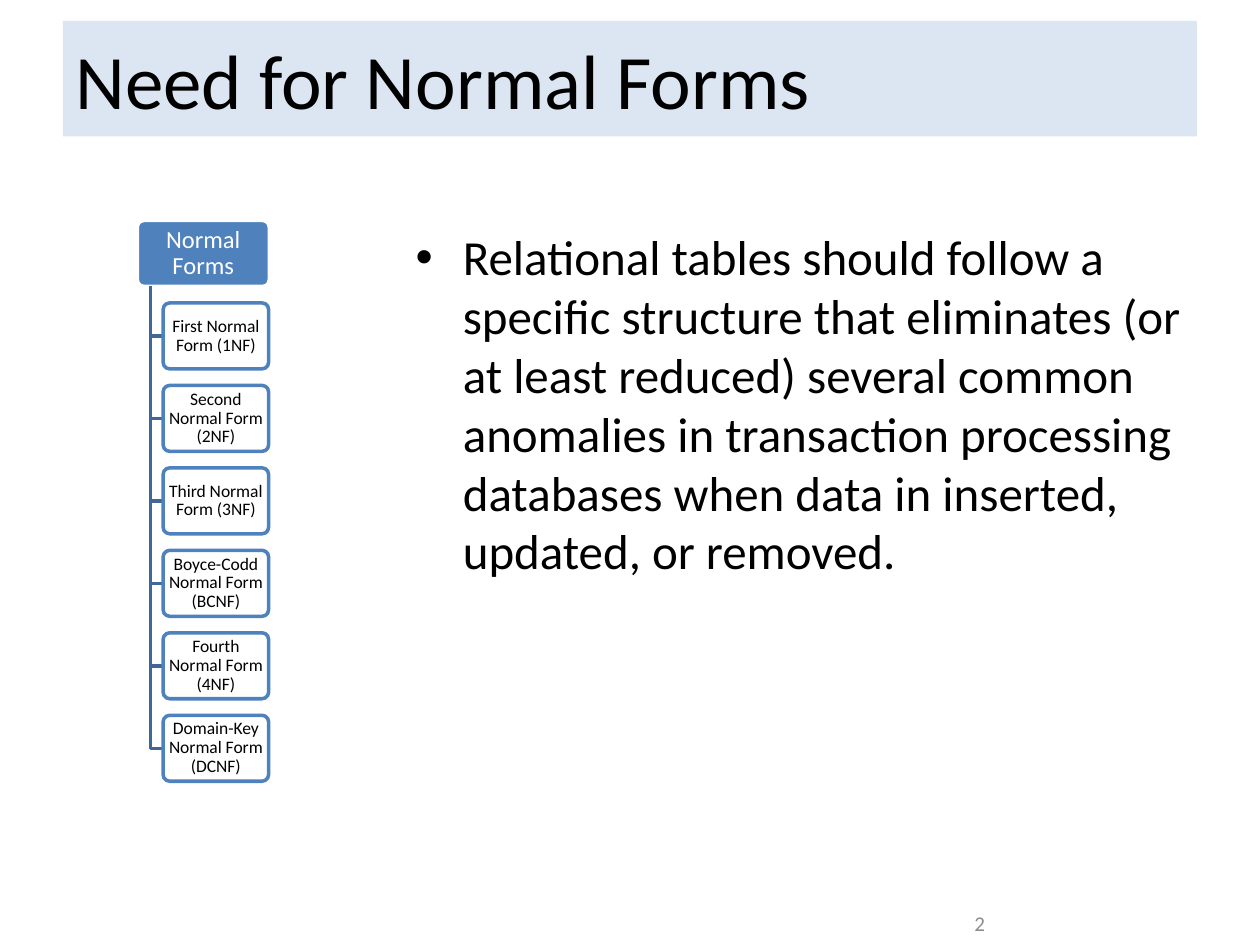
from lxml import etree
from pptx import Presentation
from pptx.dml.color import RGBColor
from pptx.enum.shapes import MSO_SHAPE
from pptx.enum.text import MSO_ANCHOR, PP_ALIGN
from pptx.oxml.ns import qn
from pptx.util import Pt

RECT, ROUND = MSO_SHAPE.RECTANGLE, MSO_SHAPE.ROUNDED_RECTANGLE
TOP, MIDDLE = MSO_ANCHOR.TOP, MSO_ANCHOR.MIDDLE
LEFT, CENTER, RIGHT = PP_ALIGN.LEFT, PP_ALIGN.CENTER, PP_ALIGN.RIGHT

BLACK = RGBColor(0x00, 0x00, 0x00)
WHITE = RGBColor(0xFF, 0xFF, 0xFF)
GRAY = RGBColor(0x8C, 0x8C, 0x8C)
PALE_BLUE = RGBColor(0xDC, 0xE6, 0xF2)
BLUE = RGBColor(0x4F, 0x81, 0xBD)
DARK_BLUE = RGBColor(0x3F, 0x67, 0x97)

FORMS = [
    "First Normal Form (1NF)",
    "Second Normal Form (2NF)",
    "Third Normal Form (3NF)",
    "Boyce-Codd Normal Form (BCNF)",
    "Fourth Normal Form (4NF)",
    "Domain-Key Normal Form (DCNF)",
]


def write(sp, text, *, size, font="Calibri", color=BLACK, align=LEFT,
          anchor=TOP, inset=(7.2, 3.6), spacing=None, bullet_indent=None):
    """Fill a shape with one formatted paragraph."""
    tf = sp.text_frame
    tf.word_wrap = True
    tf.vertical_anchor = anchor
    tf.margin_left = tf.margin_right = Pt(inset[0])
    tf.margin_top = tf.margin_bottom = Pt(inset[1])
    p = tf.paragraphs[0]
    p.alignment = align
    if spacing:
        p.line_spacing = spacing
    if bullet_indent:
        pPr = p._p.get_or_add_pPr()
        pPr.set("marL", str(Pt(bullet_indent)))
        pPr.set("indent", str(-Pt(bullet_indent)))
        etree.SubElement(pPr, qn("a:buFont")).set("typeface", "Arial")
        etree.SubElement(pPr, qn("a:buChar")).set("char", "•")
    r = p.add_run()
    r.text = text
    r.font.name = font
    r.font.size = Pt(size)
    r.font.color.rgb = color


class SlideBuilder:
    """Holds the current slide and its shared line style."""

    line_width = 2
    corner = 0.1

    def __init__(self, slide):
        self.shapes = slide.shapes

    def text(self, box, text, **fmt):
        sp = self.shapes.add_textbox(*map(Pt, box))
        write(sp, text, **fmt)

    def panel(self, box, text, *, fill, shape=RECT, line=None, alpha=None, **fmt):
        sp = self.shapes.add_shape(shape, *map(Pt, box))
        sp.shadow.inherit = False
        if shape == ROUND:
            sp.adjustments[0] = self.corner
        sp.fill.solid()
        sp.fill.fore_color.rgb = fill
        if alpha:
            clr = sp._element.spPr.find(qn("a:solidFill"))[0]
            etree.SubElement(clr, qn("a:alpha")).set("val", str(alpha * 1000))
        if line:
            sp.line.color.rgb = line
            sp.line.width = Pt(self.line_width)
        else:
            sp.line.fill.background()
        write(sp, text, **fmt)

    def elbow(self, x1, y1, x2, y2, color):
        """Line that runs down from the first point, then across."""
        fb = self.shapes.build_freeform(Pt(x1), Pt(y1))
        fb.add_line_segments([(Pt(x1), Pt(y2)), (Pt(x2), Pt(y2))], close=False)
        sp = fb.convert_to_shape()
        sp.shadow.inherit = False
        sp.fill.background()
        sp.line.color.rgb = color
        sp.line.width = Pt(self.line_width)


def main():
    prs = Presentation()
    prs.slide_width, prs.slide_height = Pt(720), Pt(540)
    s = SlideBuilder(prs.slides.add_slide(prs.slide_layouts[6]))

    # Title band
    s.panel((36, 12, 648, 66), "Need for Normal Forms", fill=PALE_BLUE,
            size=44, anchor=MIDDLE)

    # Body text
    s.text((230.4, 126, 453.6, 356.4),
           "Relational tables should follow a specific structure that eliminates "
           "(or at least reduced) several common anomalies in transaction "
           "processing databases when data in inserted, updated, or removed.",
           size=28, bullet_indent=27)

    # Hierarchy: root box, then one branch per normal form
    root_x, root_y, root_w, box_h = 78.5, 126, 75.4, 37.7
    trunk_x, child_x, child_w = 86, 93.2, 60.3
    gap = box_h / 4
    root_bottom = root_y + box_h
    s.panel((root_x, root_y, root_w, box_h), "Normal Forms", fill=BLUE,
            shape=ROUND, line=WHITE, size=14, color=WHITE, align=CENTER,
            anchor=MIDDLE, inset=(2, 1.4), spacing=0.9)
    for i, name in enumerate(FORMS):
        y = root_bottom + gap + i * (box_h + gap)
        s.elbow(trunk_x, root_bottom, child_x, y + box_h / 2, DARK_BLUE)
        s.panel((child_x, y, child_w, box_h), name, fill=WHITE, shape=ROUND,
                line=BLUE, alpha=90, size=10, align=CENTER, anchor=MIDDLE,
                inset=(1.4, 0.9), spacing=0.9)

    # Slide number
    s.text((516, 516, 54, 22.5), "2", size=12, color=GRAY, align=RIGHT,
           anchor=MIDDLE)

    prs.save("out.pptx")


if __name__ == "__main__":
    main()
